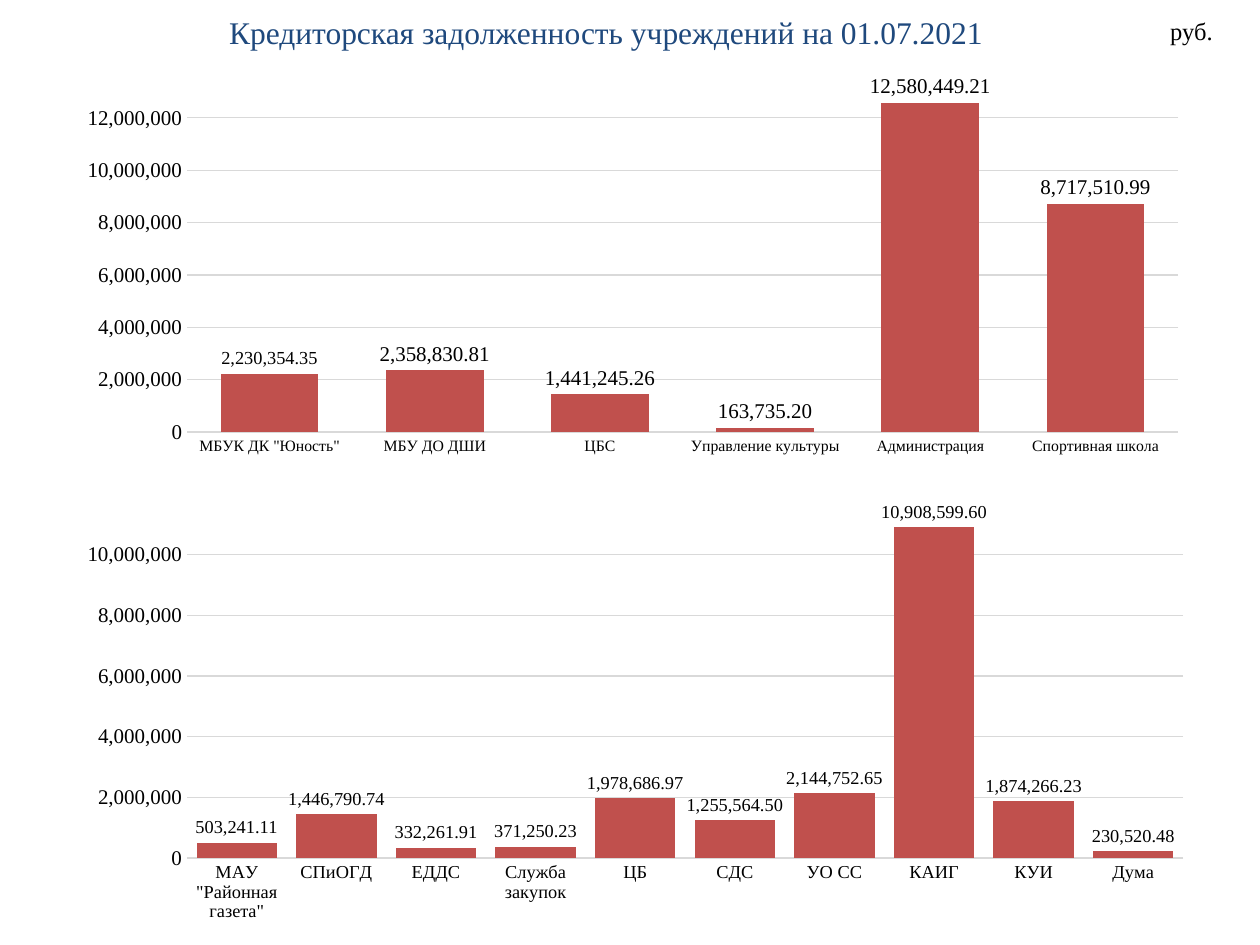
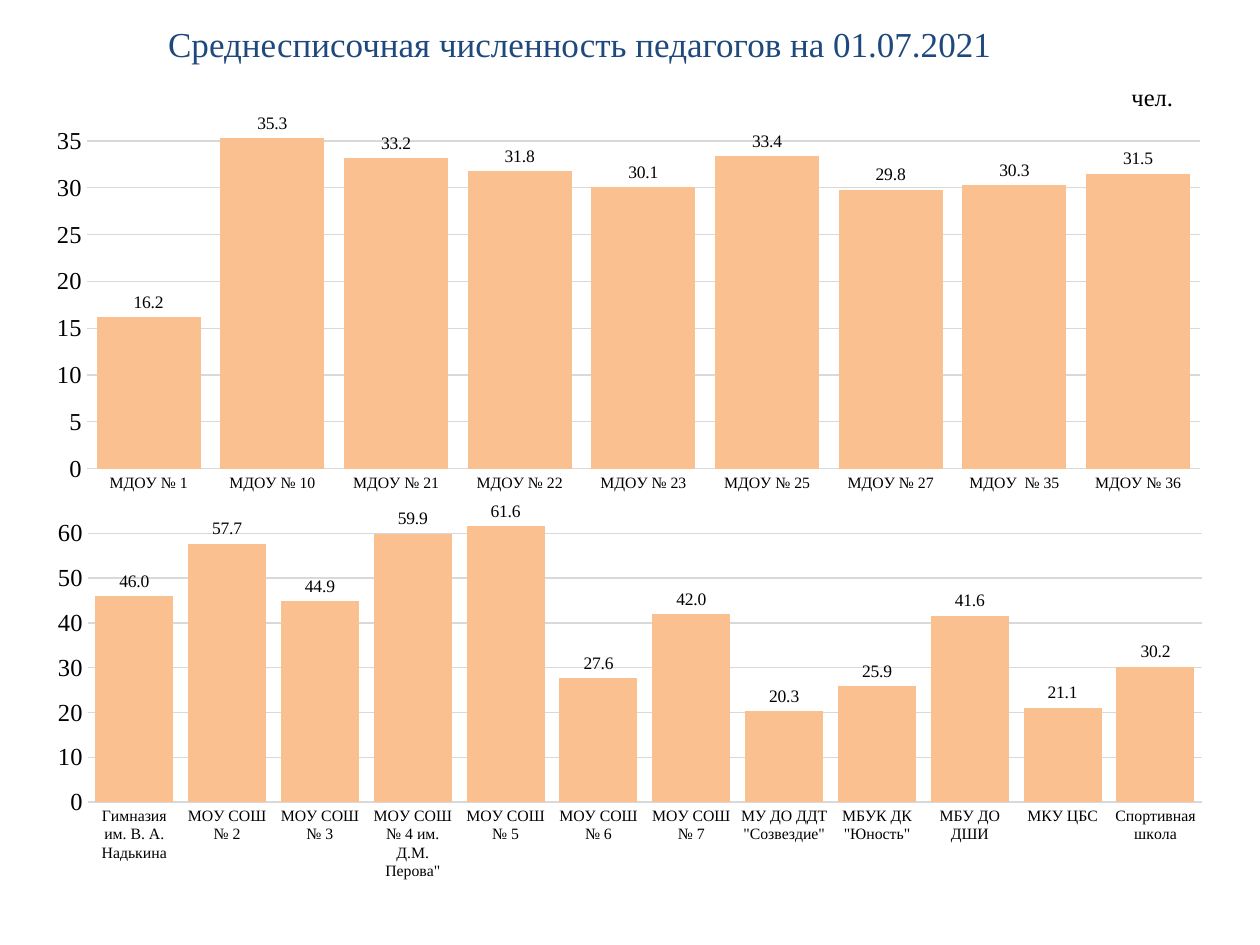
import pptx
import pptx.chart.data
import pptx.dml.color
import pptx.enum.chart
import pptx.enum.text
import pptx.oxml
import pptx.oxml.ns
import pptx.util
from dataclasses import dataclass
from typing import NamedTuple

Cm = pptx.util.Cm
Pt = pptx.util.Pt


@dataclass(frozen=True)
class Theme:
    font: str = "Times New Roman"
    title: str = "1F497D"
    text: str = "000000"
    grid: str = "D9D9D9"
    debt: str = "C0504D"
    staff: str = "FAC090"
    unit_size: float = 14
    line_width: float = 0.75
    overlap: int = -27


class Box(NamedTuple):
    """A rectangle in centimetres."""
    left: float
    top: float
    width: float
    height: float

    def lengths(self):
        return [Cm(value) for value in self]


@dataclass(frozen=True)
class BarStyle:
    color: str
    label_format: str
    label_size: float
    category_size: float
    value_size: float
    gap: int


THEME = Theme()

DEBT_UPPER = {
    'МБУК ДК "Юность"': 2230354.35,
    "МБУ ДО ДШИ": 2358830.81,
    "ЦБС": 1441245.26,
    "Управление культуры": 163735.20,
    "Администрация": 12580449.21,
    "Спортивная школа": 8717510.99,
}
DEBT_LOWER = {
    'МАУ "Районная газета"': 503241.11,
    "СПиОГД": 1446790.74,
    "ЕДДС": 332261.91,
    "Служба закупок": 371250.23,
    "ЦБ": 1978686.97,
    "СДС": 1255564.50,
    "УО СС": 2144752.65,
    "КАИГ": 10908599.60,
    "КУИ": 1874266.23,
    "Дума": 230520.48,
}
STAFF_KINDERGARTENS = {
    "МДОУ № 1": 16.2,
    "МДОУ № 10": 35.3,
    "МДОУ № 21": 33.2,
    "МДОУ № 22": 31.8,
    "МДОУ № 23": 30.1,
    "МДОУ № 25": 33.4,
    "МДОУ № 27": 29.8,
    "МДОУ  № 35": 30.3,
    "МДОУ № 36": 31.5,
}
STAFF_SCHOOLS = {
    "Гимназия им. В. А. Надькина": 46.0,
    "МОУ СОШ № 2": 57.7,
    "МОУ СОШ № 3": 44.9,
    'МОУ СОШ № 4 им. Д.М. Перова"': 59.9,
    "МОУ СОШ № 5": 61.6,
    "МОУ СОШ № 6": 27.6,
    "МОУ СОШ № 7": 42.0,
    'МУ ДО ДДТ "Созвездие"': 20.3,
    'МБУК ДК "Юность"': 25.9,
    "МБУ ДО ДШИ": 41.6,
    "МКУ ЦБС": 21.1,
    "Спортивная школа": 30.2,
}


def rgb(value):
    return pptx.dml.color.RGBColor.from_string(value)


def format_font(font, size, color=THEME.text):
    font.name = THEME.font
    font.size = Pt(size)
    font.bold = False
    font.color.rgb = rgb(color)


def write_text(shape, text, *, size, color=THEME.text, align=None, wrap=True):
    frame = shape.text_frame
    frame.word_wrap = wrap
    frame.auto_size = pptx.enum.text.MSO_AUTO_SIZE.SHAPE_TO_FIT_TEXT
    frame.vertical_anchor = pptx.enum.text.MSO_ANCHOR.TOP
    paragraph = frame.paragraphs[0]
    paragraph.alignment = align
    run = paragraph.add_run()
    run.text = text
    format_font(run.font, size, color)


def add_title(slide, box, text, size):
    title = slide.shapes.title
    title.left, title.top, title.width, title.height = box.lengths()
    write_text(title, text, size=size, color=THEME.title,
               align=pptx.enum.text.PP_ALIGN.CENTER)


def add_unit(slide, box, text):
    write_text(slide.shapes.add_textbox(*box.lengths()), text,
               size=THEME.unit_size, wrap=False)


def place_plot(chart, box, plot):
    """Fix the inner plot area; plot is measured from the corner of box."""
    fractions = {"x": plot.left / box.width, "y": plot.top / box.height,
                 "w": plot.width / box.width, "h": plot.height / box.height}
    modes = "".join(f'<c:{key}Mode val="edge"/>' for key in "xy")
    values = "".join(f'<c:{key} val="{value:.4f}"/>'
                     for key, value in fractions.items())
    layout = pptx.oxml.parse_xml(
        f'<c:layout {pptx.oxml.ns.nsdecls("c")}><c:manualLayout>'
        f'<c:layoutTarget val="inner"/>{modes}{values}'
        '</c:manualLayout></c:layout>')
    area = chart._chartSpace.chart.plotArea
    for old in area.findall(pptx.oxml.ns.qn("c:layout")):
        area.remove(old)
    area.insert(0, layout)


def format_line(line):
    line.color.rgb = rgb(THEME.grid)
    line.width = Pt(THEME.line_width)


def format_axes(chart, style, maximum, step):
    no_tick = pptx.enum.chart.XL_TICK_MARK.NONE
    sizes = ((chart.category_axis, style.category_size),
             (chart.value_axis, style.value_size))
    for axis, size in sizes:
        axis.major_tick_mark = axis.minor_tick_mark = no_tick
        format_font(axis.tick_labels.font, size)
    format_line(chart.category_axis.format.line)
    values = chart.value_axis
    values.minimum_scale, values.maximum_scale = 0, maximum
    values.major_unit = step
    values.tick_labels.number_format = "#,##0"
    values.tick_labels.number_format_is_linked = False
    values.format.line.fill.background()
    values.has_major_gridlines = True
    format_line(values.major_gridlines.format.line)


def format_bars(chart, style):
    plot = chart.plots[0]
    plot.vary_by_categories = False
    plot.gap_width = style.gap
    plot.overlap = THEME.overlap
    series = plot.series[0]
    series.invert_if_negative = False
    series.format.fill.solid()
    series.format.fill.fore_color.rgb = rgb(style.color)
    labels = series.data_labels
    labels.show_value = True
    labels.number_format = style.label_format
    labels.number_format_is_linked = False
    labels.position = pptx.enum.chart.XL_LABEL_POSITION.OUTSIDE_END
    format_font(labels.font, style.label_size)


def add_bar_chart(slide, box, plot, values, style, maximum, step):
    data = pptx.chart.data.CategoryChartData(number_format=style.label_format)
    data.categories = list(values)
    data.add_series("Series 1", list(values.values()))
    chart = slide.shapes.add_chart(
        pptx.enum.chart.XL_CHART_TYPE.COLUMN_CLUSTERED,
        *box.lengths(), data).chart
    chart.has_title = False
    chart.has_legend = False
    format_font(chart.font, 10)
    format_axes(chart, style, maximum, step)
    format_bars(chart, style)
    place_plot(chart, box, plot)
    return chart


def build_debt_slide(slide):
    add_title(slide, Box(2.82, 0.13, 18.8, 1.02),
              "Кредиторская задолженность учреждений на 01.07.2021", 18)
    add_unit(slide, Box(23.34, 0.2, 1.52, 0.86), "руб.")
    upper = add_bar_chart(
        slide, Box(1.3, 1.52, 22.91, 7.8), Box(2.47, 0.31, 19.98, 6.88),
        DEBT_UPPER, BarStyle(THEME.debt, "#,##0.00", 12, 9, 12, 69),
        13_000_000, 2_000_000)
    first_label = upper.plots[0].series[0].points[0].data_label
    format_font(first_label.font, 10.5)
    first_label.position = pptx.enum.chart.XL_LABEL_POSITION.OUTSIDE_END
    add_bar_chart(
        slide, Box(1.3, 10.13, 23.01, 8.61), Box(2.47, 0.4, 20.08, 6.76),
        DEBT_LOWER, BarStyle(THEME.debt, "#,##0.00", 10.5, 10.5, 12, 24),
        11_000_000, 2_000_000)


def build_staff_slide(slide):
    style = BarStyle(THEME.staff, "#,##0.0", 10, 9, 14, 19)
    add_title(slide, Box(1.19, 0.33, 21, 1.12),
              "Среднесписочная численность педагогов на 01.07.2021", 20)
    add_bar_chart(
        slide, Box(0.66, 2.29, 24, 7.8), Box(1.09, 0.34, 22.44, 6.82),
        STAFF_KINDERGARTENS, style, 36, 5)
    add_bar_chart(
        slide, Box(0.71, 10.11, 24, 7.8), Box(1.06, 0.18, 22.46, 5.88),
        STAFF_SCHOOLS, style, 65, 10)
    add_unit(slide, Box(22.56, 1.52, 1.4, 0.86), "чел.")


def main():
    presentation = pptx.Presentation()
    presentation.slide_width = Cm(25.4)
    presentation.slide_height = Cm(19.05)
    title_only = presentation.slide_layouts.get_by_name("Title Only")
    for build in (build_debt_slide, build_staff_slide):
        build(presentation.slides.add_slide(title_only))
    presentation.save("out.pptx")


if __name__ == "__main__":
    main()
